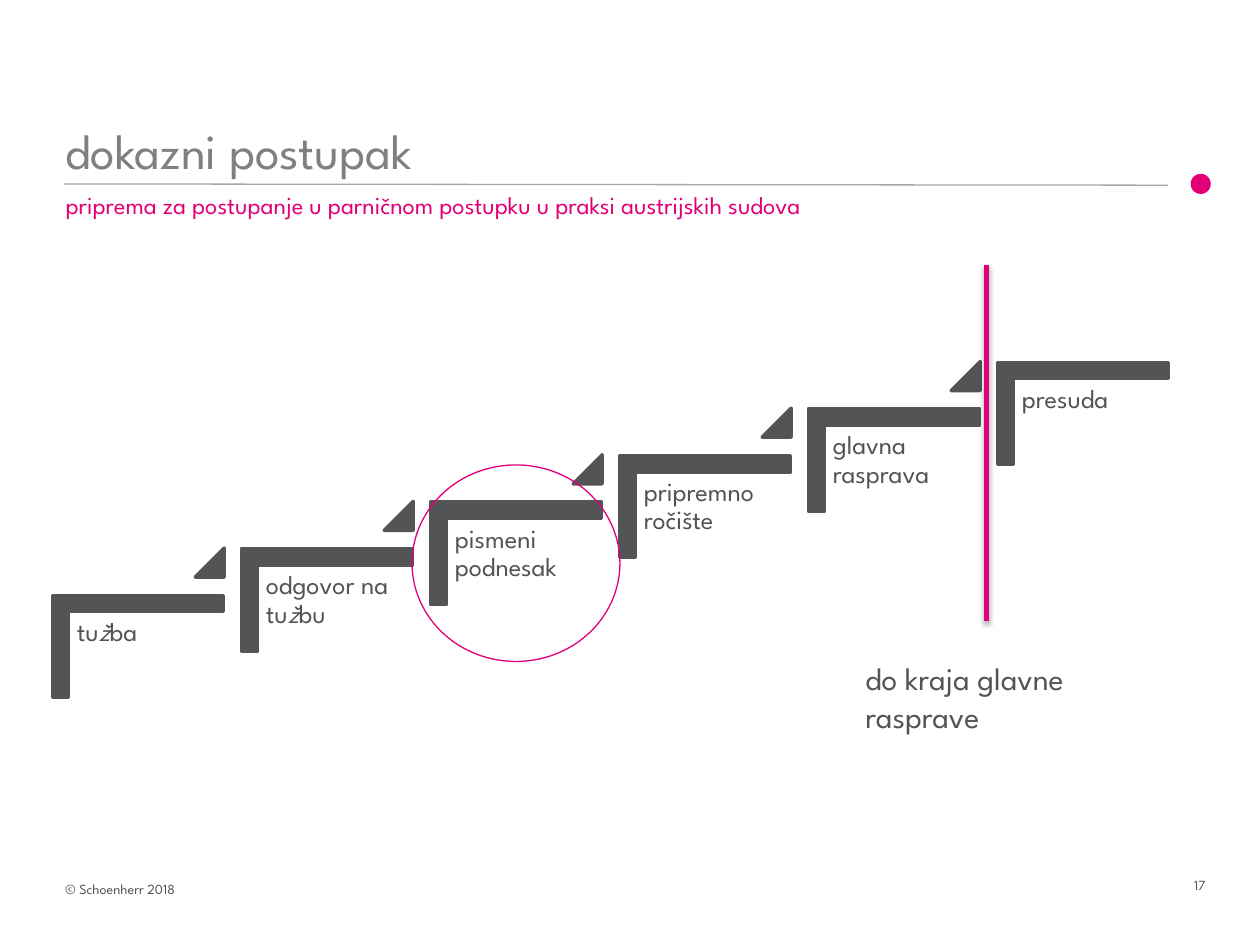
from dataclasses import dataclass
from lxml import etree
from pptx import Presentation
from pptx.dml.color import RGBColor
from pptx.enum.shapes import MSO_CONNECTOR, MSO_SHAPE
from pptx.enum.text import MSO_ANCHOR, MSO_AUTO_SIZE, PP_ALIGN
from pptx.oxml.ns import qn
from pptx.util import Inches, Pt

STRAIGHT = MSO_CONNECTOR.STRAIGHT
ELLIPSE, CORNER, TRIANGLE = MSO_SHAPE.OVAL, MSO_SHAPE.CORNER, MSO_SHAPE.ISOSCELES_TRIANGLE
TOP, BOTTOM = MSO_ANCHOR.TOP, MSO_ANCHOR.BOTTOM
LEFT = PP_ALIGN.LEFT
NO_FIT = MSO_AUTO_SIZE.NONE


@dataclass(frozen=True)
class Theme:
    font: str = "League Spartan"
    dark: RGBColor = RGBColor(0x53, 0x54, 0x55)
    heading: RGBColor = RGBColor(0x80, 0x80, 0x80)
    rule: RGBColor = RGBColor(0xA6, 0xA6, 0xA6)
    accent: RGBColor = RGBColor(0xE2, 0x00, 0x7A)
    subheading: RGBColor = RGBColor(0xE2, 0x00, 0x78)
    title_size: Pt = Pt(28)
    note_size: Pt = Pt(18)
    step_size: Pt = Pt(15)
    subtitle_size: Pt = Pt(14)
    footer_size: Pt = Pt(8)


theme = Theme()


def write(shape, runs, size, color, anchor=TOP, wrap=True):
    frame = shape.text_frame
    frame.auto_size = NO_FIT
    frame.word_wrap = wrap
    frame.vertical_anchor = anchor
    paragraph = frame.paragraphs[0]
    paragraph.alignment = LEFT
    paragraph.space_before = Pt(0)
    for text, italic in runs:
        run = paragraph.add_run()
        run.text = text
        run.font.name = theme.font
        run.font.size = size
        run.font.italic = italic
        run.font.color.rgb = color
    return frame, paragraph


def draw(kind, left, top, width, height, fill, line, weight):
    shape = slide.shapes.add_shape(kind, Inches(left), Inches(top), Inches(width), Inches(height))
    shape.shadow.inherit = False
    for part, color in ((shape.fill, fill), (shape.line.fill, line)):
        if color is None:
            part.background()
        else:
            part.solid()
            part.fore_color.rgb = color
    if line is not None:
        shape.line.width = Pt(weight)
    return shape


prs = Presentation()
prs.slide_width, prs.slide_height = Inches(10), Inches(7.5)
slide = prs.slides.add_slide(prs.slide_layouts[0])

title, subtitle = slide.placeholders
title.left, title.top, title.width, title.height = map(Inches, (0.42, 0.92, 8.86, 0.55))
write(title, [("dokazni postupak", False)], theme.title_size, theme.heading, BOTTOM)
subtitle.left, subtitle.top, subtitle.width, subtitle.height = map(Inches, (0.42, 1.46, 8.11, 0.47))
write(subtitle, [("priprema za postupanje u parničnom postupku u praksi austrijskih sudova", False)],
      theme.subtitle_size, theme.subheading)

draw(ELLIPSE, 9.45, 1.38, 0.16, 0.16, theme.accent, None, 0)

steps = [
    [("tu", False), ("ž", True), ("ba", False)],
    [("odgovor na tu", False), ("ž", True), ("bu", False)],
    [("pismeni podnesak", False)],
    [("pripremno ročište", False)],
    [("glavna rasprava", False)],
    [("presuda", False)],
]
run_length, rise = 1.5, 0.37
for index, step in enumerate(steps):
    x, y = run_length * index, -rise * index
    stair = draw(CORNER, 0.69 + x, 4.45 + y, 0.81, 1.36, theme.dark, theme.dark, 2)
    stair.rotation = 90
    stair.adjustments[0] = stair.adjustments[1] = 0.16
    label = slide.shapes.add_textbox(Inches(0.55 + x), Inches(4.85 + y), Inches(1.22), Inches(1.07))
    frame, paragraph = write(label, step, theme.step_size, theme.dark)
    frame.margin_left = frame.margin_top = frame.margin_right = frame.margin_bottom = Inches(0.06)
    paragraph.line_spacing = 0.9
    if index < len(steps) - 1:
        climb = draw(TRIANGLE, 1.55 + x, 4.35 + y, 0.23, 0.23, theme.dark, theme.dark, 2)
        climb.adjustments[0] = 1

lines = [
    ((0.51, 1.46, 9.27, 1.47), theme.rule, 0.75, False),
    ((7.83, 2.1, 7.83, 4.93), theme.accent, 3, True),
]
for ends, color, weight, shadowed in lines:
    line = slide.shapes.add_connector(STRAIGHT, *map(Inches, ends))
    line.line.color.rgb = color
    line.line.width = Pt(weight)
    effects = etree.SubElement(line._element.spPr, qn("a:effectLst"))
    if shadowed:
        shadow = etree.SubElement(effects, qn("a:outerShdw"), blurRad=str(Pt(3.1)),
                                  dist=str(Pt(1.8)), dir="5400000", rotWithShape="0")
        black = etree.SubElement(shadow, qn("a:srgbClr"), val="000000")
        etree.SubElement(black, qn("a:alpha"), val="35000")

draw(ELLIPSE, 3.27, 3.69, 1.65, 1.56, None, theme.accent, 0.75)

notes = [
    ("do kraja glavne rasprave", (6.77, 5.18, 2.13, 0.71), theme.note_size, True),
    ("© Schoenherr 2018", (0.42, 6.94, 2.2, 0.24), theme.footer_size, True),
    ("17", (9.38, 6.91, 0.47, 0.24), theme.footer_size, False),
]
for text, place, size, wrap in notes:
    note = slide.shapes.add_textbox(*map(Inches, place))
    write(note, [(text, False)], size, theme.dark, wrap=wrap)

prs.save("out.pptx")
